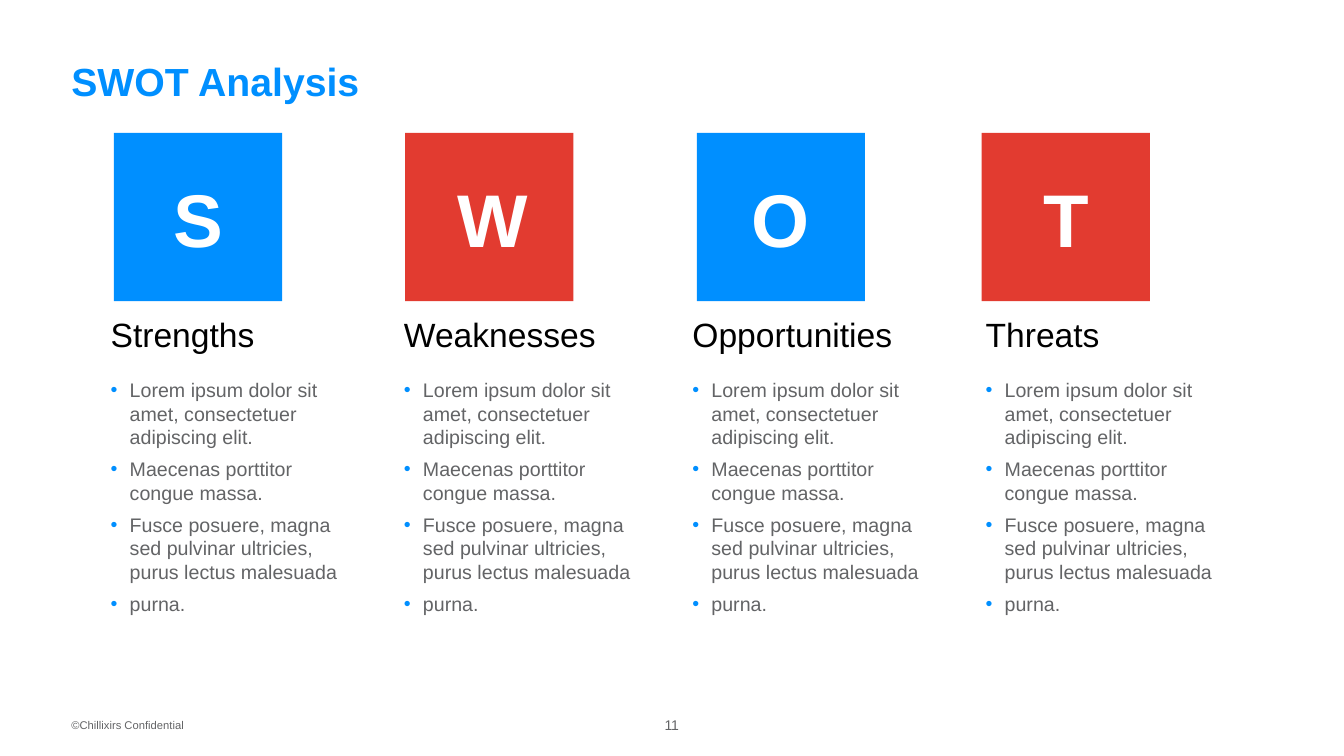
from lxml import etree
from pptx import Presentation
from pptx.dml.color import RGBColor
from pptx.enum.shapes import MSO_SHAPE
from pptx.enum.text import MSO_ANCHOR, MSO_AUTO_SIZE, PP_ALIGN
from pptx.oxml.ns import qn
from pptx.util import Cm, Pt

BLUE = RGBColor(0x00, 0x8F, 0xFF)
RED = RGBColor(0xE2, 0x3B, 0x30)
GREY = RGBColor(0x63, 0x64, 0x66)
BLACK = RGBColor(0x00, 0x00, 0x00)
WHITE = RGBColor(0xFF, 0xFF, 0xFF)

RECTANGLE = MSO_SHAPE.RECTANGLE
TOP, MIDDLE, BOTTOM = MSO_ANCHOR.TOP, MSO_ANCHOR.MIDDLE, MSO_ANCHOR.BOTTOM
LEFT, CENTER = PP_ALIGN.LEFT, PP_ALIGN.CENTER
FIT_SHAPE, FIT_NONE = MSO_AUTO_SIZE.SHAPE_TO_FIT_TEXT, MSO_AUTO_SIZE.NONE

FONT = "Arial"
SQUARE_SIZE = 4.24
LETTER_WIDTH = 2.08
COLUMNS = [
    ("Strengths", BLUE, 2.87, 2.54),
    ("Weaknesses", RED, 10.21, 9.93),
    ("Opportunities", BLUE, 17.56, 17.2),
    ("Threats", RED, 24.74, 24.59),
]
POINTS = [
    "Lorem ipsum dolor sit amet, consectetuer adipiscing elit.",
    "Maecenas porttitor congue massa.",
    "Fusce posuere, magna sed pulvinar ultricies, purus lectus malesuada",
    "purna.",
]


def add_bullet(para, color):
    properties = para._p.get_or_add_pPr()
    properties.set("marL", str(Cm(0.48)))
    properties.set("indent", str(-Cm(0.48)))
    bullet_color = etree.SubElement(properties, qn("a:buClr"))
    etree.SubElement(bullet_color, qn("a:srgbClr"), val=str(color))
    etree.SubElement(properties, qn("a:buFont"), typeface=FONT)
    etree.SubElement(properties, qn("a:buChar"), char="•")


def add_text(page, texts, left, top, width, height, *, size, color, bold=False,
             align=LEFT, anchor=TOP, insets=(0.25, 0.13), fit=FIT_SHAPE,
             wrap=True, bullet=None, after=None, spacing=None):
    box = page.shapes.add_textbox(Cm(left), Cm(top), Cm(width), Cm(height))
    frame = box.text_frame
    frame.word_wrap = wrap
    frame.auto_size = fit
    frame.vertical_anchor = anchor
    frame.margin_left = frame.margin_right = Cm(insets[0])
    frame.margin_top = frame.margin_bottom = Cm(insets[1])
    for index, text in enumerate(texts):
        para = frame.add_paragraph() if index else frame.paragraphs[0]
        if bullet is not None:
            add_bullet(para, bullet)
        para.alignment = align
        if after is not None:
            para.space_after = Pt(after)
        if spacing is not None:
            para.line_spacing = spacing
        span = para.add_run()
        span.text = text
        span.font.name = FONT
        span.font.size = Pt(size)
        span.font.bold = bold
        span.font.color.rgb = color


def add_square(page, left, top, color):
    square = page.shapes.add_shape(
        RECTANGLE, Cm(left), Cm(top), Cm(SQUARE_SIZE), Cm(SQUARE_SIZE))
    square.shadow.inherit = False
    square.fill.solid()
    square.fill.fore_color.rgb = color
    square.line.fill.background()


def add_column(page, heading, color, square_left, text_left):
    add_square(page, square_left, 3.35, color)
    letter_left = square_left + (SQUARE_SIZE - LETTER_WIDTH) / 2
    add_text(page, [heading[0]], letter_left, 4.24, LETTER_WIDTH, 2.54,
             size=53.3, color=WHITE, bold=True, align=CENTER)
    add_text(page, [heading], text_left, 7.77, 6.8, 1.27, size=24, color=BLACK)
    add_text(page, POINTS, text_left, 9.4, 6.63, 6.27, size=14, color=GREY,
             bullet=BLUE, after=6)


def main():
    deck = Presentation()
    deck.slide_width = Cm(33.87)
    deck.slide_height = Cm(19.05)
    page = deck.slides.add_slide(deck.slide_layouts[6])
    add_text(page, ["SWOT Analysis"], 1.8, 1.63, 30.28, 1.02, size=28, color=BLUE,
             bold=True, anchor=BOTTOM, insets=(0, 0), fit=FIT_NONE, spacing=0.9)
    for column in COLUMNS:
        add_column(page, *column)
    add_text(page, ["©Chillixirs Confidential"], 1.8, 17.88, 4.88, 0.76, size=8,
             color=GREY, anchor=MIDDLE, insets=(0, 0), fit=FIT_NONE)
    add_text(page, ["11"], 15.57, 17.88, 2.72, 0.76, size=10, color=GREY,
             align=CENTER, anchor=MIDDLE, insets=(0, 0.13), fit=FIT_NONE, wrap=False)
    deck.save("out.pptx")


if __name__ == "__main__":
    main()
